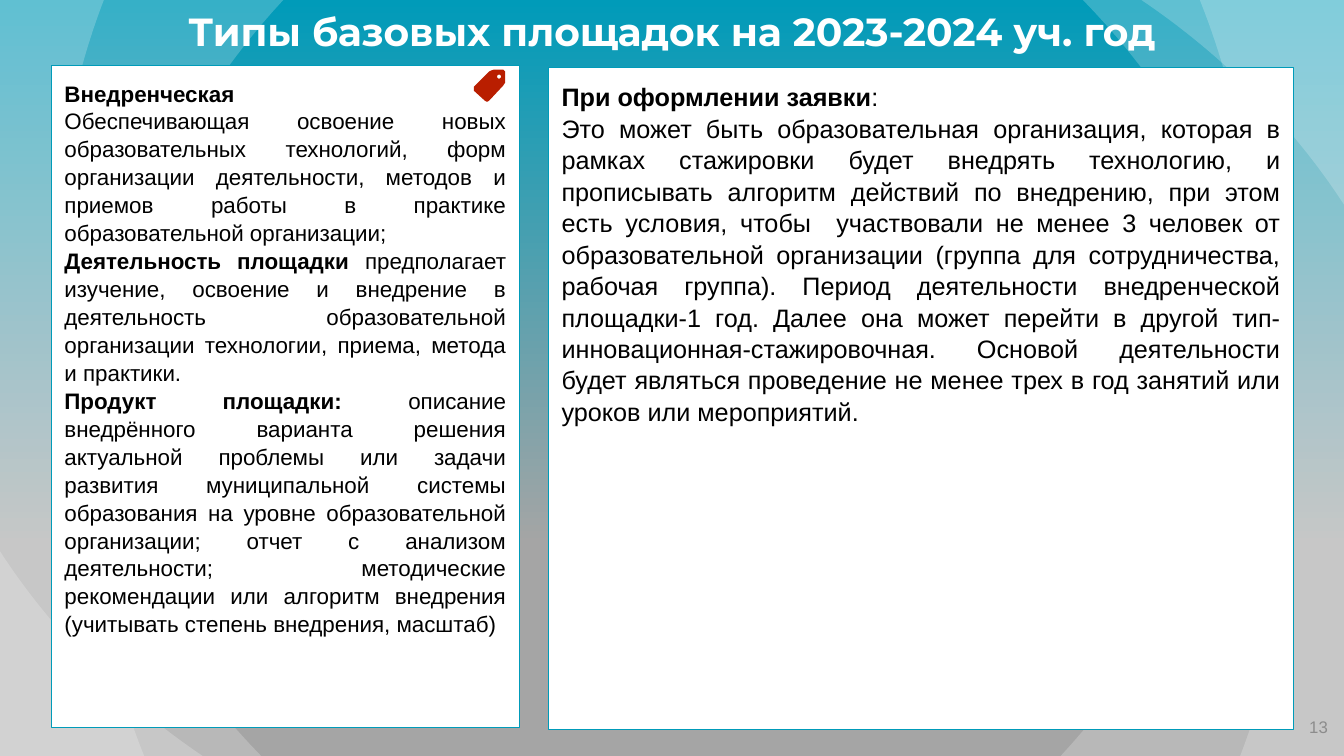
import math
from dataclasses import dataclass

from lxml import etree
from pptx import Presentation
from pptx import util as u
from pptx.dml.color import RGBColor
from pptx.enum import shapes, text
from pptx.oxml.ns import qn

WIDTH, HEIGHT = 13.33, 7.5
ALIGN = text.PP_ALIGN


@dataclass(frozen=True)
class Theme:
    teal: str = "009BB9"
    grey: str = "A5A5A5"
    white: str = "FFFFFF"
    black: str = "000000"
    red: str = "B91E00"
    muted: str = "8C8C8C"
    heading_font: str = "Montserrat"
    body_font: str = "Arial"
    title_size: int = 28
    large_size: int = 18
    body_size: int = 16
    number_size: int = 12
    line_spacing: float = 1.04


def bezier(start, control1, control2, end, steps=32):
    """Points along a cubic curve, without its start."""
    points = []
    for step in range(1, steps + 1):
        t = step / steps
        weights = ((1 - t) ** 3, 3 * t * (1 - t) ** 2, 3 * t * t * (1 - t), t ** 3)
        points.append(tuple(
            sum(weight * value for weight, value in zip(weights, axis))
            for axis in zip(start, control1, control2, end)))
    return points


class SlideBuilder:
    def __init__(self, slide, theme):
        self.slide = slide
        self.theme = theme

    def background(self):
        fill = self.slide.background.fill
        fill.gradient()
        fill.gradient_angle = 270
        stops = ((0, self.theme.teal), (0.72, self.theme.grey))
        for stop, (position, color) in zip(fill.gradient_stops, stops):
            stop.position = position
            stop.color.rgb = RGBColor.from_string(color)

    def outline(self, contours, color, opacity=None):
        """Filled outline made of one or more closed contours."""
        emu = [[(u.Inches(x), u.Inches(y)) for x, y in contour] for contour in contours]
        builder = self.slide.shapes.build_freeform(*emu[0][0], scale=1.0)
        for index, contour in enumerate(emu):
            if index:
                builder.move_to(*contour[0])
            builder.add_line_segments(contour[1:], close=True)
        shape = builder.convert_to_shape()
        shape.shadow.inherit = False
        shape.line.fill.background()
        shape.fill.solid()
        shape.fill.fore_color.rgb = RGBColor.from_string(color)
        if opacity is not None:
            color_element = shape.element.spPr.find(qn("a:solidFill")).find(qn("a:srgbClr"))
            alpha = etree.SubElement(color_element, qn("a:alpha"))
            alpha.set("val", str(opacity * 1000))

    def add_text(self, shape, paragraphs, size, color, font, spacing, inset=0):
        """Each paragraph is (alignment, [(words, bold), ...])."""
        frame = shape.text_frame
        frame.word_wrap = True
        frame.margin_left = frame.margin_right = u.Inches(inset)
        frame.margin_top = frame.margin_bottom = u.Inches(inset)
        for index, (alignment, runs) in enumerate(paragraphs):
            paragraph = frame.add_paragraph() if index else frame.paragraphs[0]
            paragraph.alignment = alignment
            paragraph.line_spacing = spacing
            for words, bold in runs:
                run = paragraph.add_run()
                run.text = words
                run.font.name = font
                run.font.size = u.Pt(size)
                run.font.bold = bold
                run.font.color.rgb = RGBColor.from_string(color)
        return frame

    def label(self, box, words, alignment, size, color, font, bold=False, spacing=1.0):
        shape = self.slide.shapes.add_textbox(*map(u.Inches, box))
        frame = self.add_text(shape, [(alignment, [(words, bold)])],
                              size, color, font, spacing)
        frame.vertical_anchor = text.MSO_ANCHOR.MIDDLE

    def panel(self, box, paragraphs, size):
        shape = self.slide.shapes.add_shape(
            shapes.MSO_SHAPE.RECTANGLE, *map(u.Inches, box))
        shape.shadow.inherit = False
        shape.fill.solid()
        shape.fill.fore_color.rgb = RGBColor.from_string(self.theme.white)
        shape.line.color.rgb = RGBColor.from_string(self.theme.teal)
        shape.line.width = u.Pt(0.75)
        frame = self.add_text(shape, paragraphs, size, self.theme.black,
                              self.theme.body_font, self.theme.line_spacing, inset=0.13)
        frame.vertical_anchor = text.MSO_ANCHOR.TOP


# Translucent arcs on the right; the left ones are the same turned by 180 degrees
CORNERS = [(WIDTH, HEIGHT), (WIDTH, 0)]
ARCS = [
    [(11.9, 0), *bezier((11.9, 0), (12.24, 0.85), (12.42, 1.75), (12.41, 2.67)),
     *bezier((12.41, 2.67), (12.41, 4.53), (11.7, 6.23), (10.52, HEIGHT)), *CORNERS],
    [(10.74, 0), *bezier((10.74, 0), (11.99, 1.28), (12.77, 3.04), (12.77, 4.97)),
     *bezier((12.77, 4.97), (12.77, 5.84), (12.61, 6.69), (12.3, HEIGHT)), *CORNERS],
    [(WIDTH, 0), (11.32, 0),
     *bezier((11.32, 0), (12.12, 0.54), (12.81, 1.23), (WIDTH, 2.03))],
]

TAG_BODY = [(4.9, 0.69), (4.87, 0.7), (4.85, 0.71), (4.7, 0.86), (4.7, 0.9), (4.81, 1),
            (4.83, 1.01), (4.85, 1), (4.99, 0.85), (5.01, 0.82), (5.01, 0.71), (4.99, 0.69)]
TAG_HOLE = [(4.95 + 0.02 * math.cos(math.tau * k / 16),
             0.76 + 0.02 * math.sin(math.tau * k / 16)) for k in range(16)]

PLATFORM_TEXT = [
    (ALIGN.JUSTIFY, [("Внедренческая", True)]),
    (ALIGN.JUSTIFY, [("Обеспечивающая освоение новых образовательных технологий, форм "
                      "организации деятельности, методов и приемов работы в практике "
                      "образовательной организации;", False)]),
    (ALIGN.JUSTIFY, [("Деятельность площадки ", True),
                     ("предполагает изучение, освоение и внедрение в деятельность "
                      "образовательной организации технологии, приема, метода и "
                      "практики.", False)]),
    (ALIGN.JUSTIFY, [("Продукт площадки: ", True),
                     ("описание внедрённого варианта решения актуальной проблемы или "
                      "задачи развития муниципальной системы образования на уровне "
                      "образовательной организации; отчет с анализом деятельности; "
                      "методические рекомендации или алгоритм внедрения (учитывать "
                      "степень внедрения, масштаб)", False)]),
]
APPLICATION_TEXT = [
    (ALIGN.LEFT, [("При оформлении заявки", True), (":", False)]),
    (ALIGN.JUSTIFY, [("Это может быть образовательная организация, которая в рамках "
                      "стажировки будет внедрять технологию, и прописывать алгоритм "
                      "действий по внедрению, при этом есть условия, чтобы  участвовали "
                      "не менее 3 человек от образовательной организации (группа для "
                      "сотрудничества, рабочая группа). Период деятельности внедренческой "
                      "площадки-1 год. Далее она может перейти в другой "
                      "тип-инновационная-стажировочная. Основой деятельности будет "
                      "являться проведение не менее трех в год занятий или уроков или "
                      "мероприятий.", False)]),
]


def main():
    presentation = Presentation()
    presentation.slide_width = u.Inches(WIDTH)
    presentation.slide_height = u.Inches(HEIGHT)
    theme = Theme()
    builder = SlideBuilder(
        presentation.slides.add_slide(presentation.slide_layouts[6]), theme)

    # Backdrop
    builder.background()
    turned = [[(WIDTH - x, HEIGHT - y) for x, y in arc] for arc in ARCS]
    for arc in ARCS + turned:
        builder.outline([arc], theme.white, opacity=21)

    # Title and slide number
    builder.label((0.38, 0, 12.57, 0.68), "Типы базовых площадок на 2023-2024 уч. год",
                  ALIGN.CENTER, theme.title_size, theme.white, theme.heading_font,
                  bold=True, spacing=0.9)
    builder.label((12.37, 6.93, 0.8, 0.57), "13", ALIGN.RIGHT,
                  theme.number_size, theme.muted, theme.body_font)

    # Left panel with its tag, then right panel
    builder.panel((0.51, 0.65, 4.64, 6.57), PLATFORM_TEXT, theme.body_size)
    builder.outline([TAG_BODY, TAG_HOLE], theme.red)
    builder.panel((5.44, 0.67, 7.39, 6.57), APPLICATION_TEXT, theme.large_size)

    presentation.save("out.pptx")


if __name__ == "__main__":
    main()
